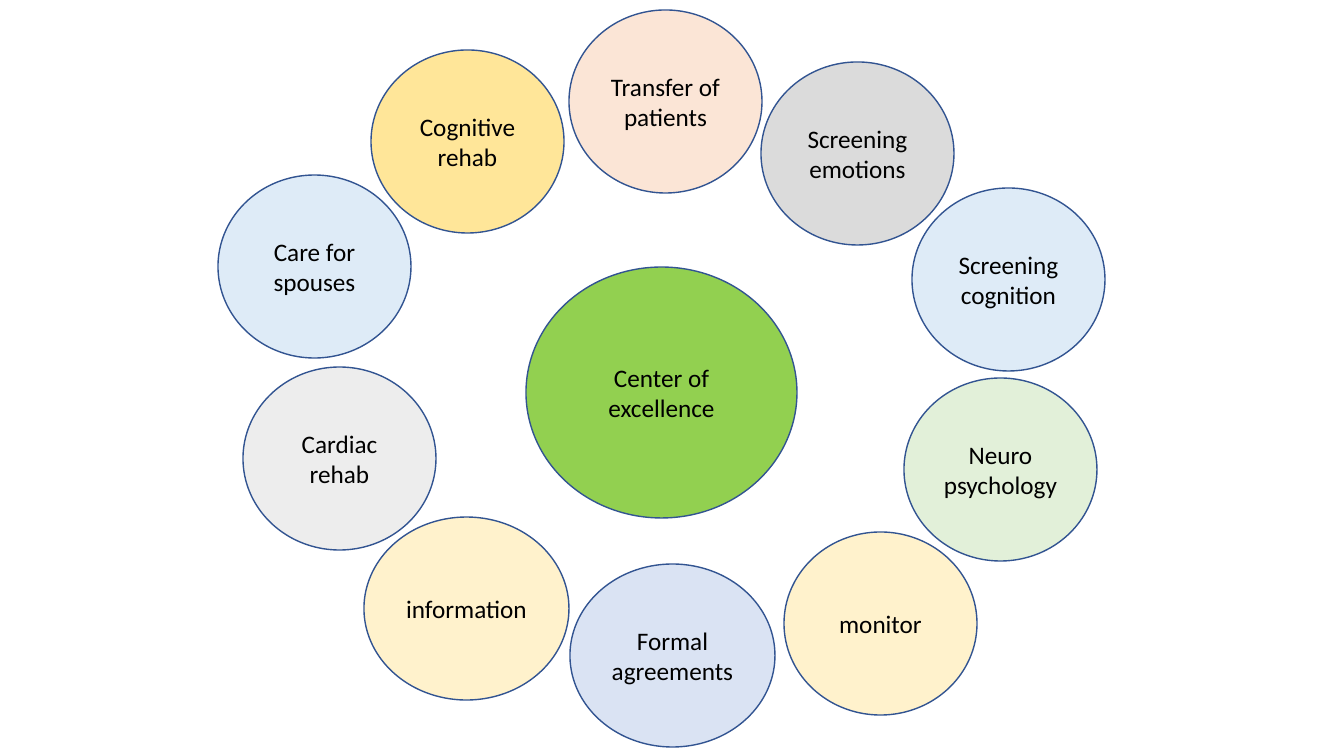
from pptx import Presentation
from pptx.dml.color import RGBColor
from pptx.enum.shapes import MSO_SHAPE
from pptx.enum.text import MSO_ANCHOR, PP_ALIGN
from pptx.util import Emu, Pt

BLACK = RGBColor(0x00, 0x00, 0x00)
NAVY = RGBColor(0x32, 0x54, 0x91)
GREEN = RGBColor(0x92, 0xD0, 0x50)
GREY = RGBColor(0xDB, 0xDB, 0xDB)
GOLD = RGBColor(0xFF, 0xE6, 0x99)
SILVER = RGBColor(0xED, 0xED, 0xED)
CREAM = RGBColor(0xFF, 0xF2, 0xCC)
PEACH = RGBColor(0xFB, 0xE5, 0xD6)
SKY = RGBColor(0xDE, 0xEB, 0xF7)
BLUE = RGBColor(0xDA, 0xE3, 0xF3)
MINT = RGBColor(0xE2, 0xF0, 0xD9)

# Circle sizes in px
HUB = (271, 251)
SMALL = (193, 183)
WIDE = (205, 183)


def px(count):
    return Emu(round(count * 914400 / 100.8))


# Slide
deck = Presentation()
deck.slide_width, deck.slide_height = px(1344), px(756)
slide = deck.slides.add_slide(deck.slide_layouts[6])

# Hub and its ring: text, left, top, size, fill
circles = [
    ("Center of excellence", 526, 267, HUB, GREEN),
    ("Screening emotions", 761, 62, SMALL, GREY),
    ("Cognitive rehab", 371, 50, SMALL, GOLD),
    ("Cardiac rehab", 243, 367, SMALL, SILVER),
    ("information", 364, 517, WIDE, CREAM),
    ("Transfer of patients", 569, 10, SMALL, PEACH),
    ("Screening cognition", 912, 188, SMALL, SKY),
    ("Formal agreements", 570, 564, WIDE, BLUE),
    ("Neuro\npsychology", 904, 378, SMALL, MINT),
    ("Care for spouses", 218, 175, SMALL, SKY),
    ("monitor", 784, 532, SMALL, CREAM),
]

for text, left, top, (width, height), fill in circles:
    circle = slide.shapes.add_shape(
        MSO_SHAPE.OVAL, px(left), px(top), px(width), px(height))
    circle.shadow.inherit = False
    circle.fill.solid()
    circle.fill.fore_color.rgb = fill
    circle.line.color.rgb = NAVY
    circle.line.width = Pt(1)

    # Label
    frame = circle.text_frame
    frame.word_wrap = True
    frame.vertical_anchor = MSO_ANCHOR.MIDDLE
    frame.text = text
    for para in frame.paragraphs:
        para.alignment = PP_ALIGN.CENTER
        para.font.name = "Calibri"
        para.font.size = Pt(18)
        para.font.color.rgb = BLACK

deck.save("out.pptx")
